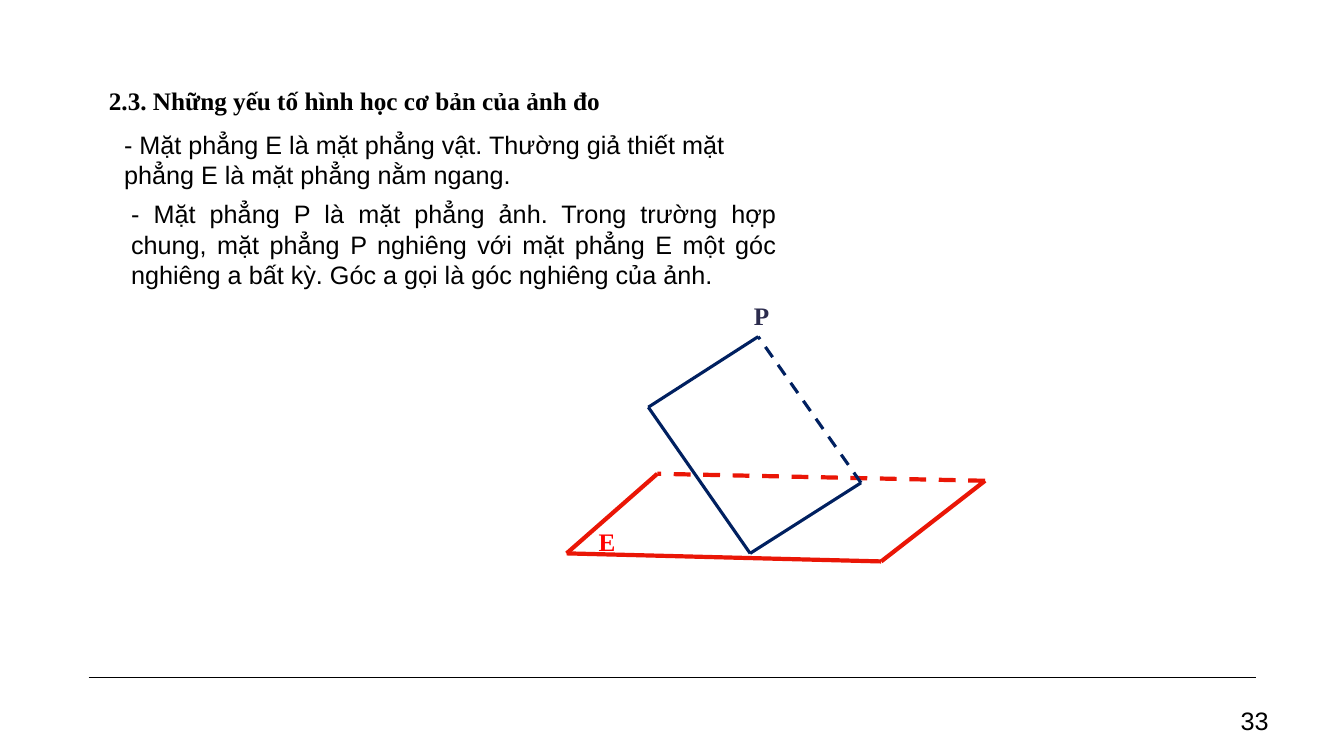
from pptx import Presentation
from pptx.dml.color import RGBColor
from pptx.enum.dml import MSO_LINE_DASH_STYLE as Dash
from pptx.enum.shapes import MSO_CONNECTOR as Connector
from pptx.enum.text import MSO_ANCHOR as Anchor, MSO_AUTO_SIZE as AutoSize, PP_ALIGN as Align
from pptx.oxml.ns import qn
from pptx.util import Pt
from lxml.etree import SubElement

EMU_PER_PX = 9144
SERIF = "Times New Roman"
SANS = "Arial"
BLACK = "000000"
RED = "EA1606"
NAVY = "002060"


def px(length):
    return length * EMU_PER_PX


def color(value):
    return RGBColor.from_string(value)


def place(shape, left, top, width, height):
    shape.left, shape.top = px(left), px(top)
    shape.width, shape.height = px(width), px(height)


def write(shape, text, font_name, text_color=BLACK, bold=False,
          align=Align.LEFT, anchor=Anchor.TOP, wrap=True):
    frame = shape.text_frame
    frame.text = text
    frame.word_wrap = wrap
    frame.auto_size = AutoSize.NONE
    frame.vertical_anchor = anchor
    paragraph = frame.paragraphs[0]
    paragraph.alignment = align
    paragraph.space_before = Pt(0)
    paragraph.font.name = font_name
    paragraph.font.size = Pt(18)
    paragraph.font.bold = bold
    paragraph.font.color.rgb = color(text_color)
    return paragraph


def write_body(shape, text, align=Align.LEFT):
    properties = write(shape, text, SANS, align=align)._p.get_or_add_pPr()
    properties.set("marL", "0")
    properties.set("indent", "0")
    SubElement(properties, qn("a:buNone"))
    properties.append(properties.find(qn("a:defRPr")))


def add_label(shapes, text, left, top, width, font_name, **style):
    label = shapes.add_textbox(px(left), px(top), px(width), px(40))
    write(label, text, font_name, **style)


def add_line(shapes, start, end, line_color, weight, dashed=False):
    line = shapes.add_connector(Connector.STRAIGHT, *map(px, start + end))
    line.line.color.rgb = color(line_color)
    line.line.width = Pt(weight)
    if dashed:
        line.line.dash_style = Dash.DASH
    SubElement(line._element.spPr, qn("a:effectLst"))


def add_plane(slide, corners, line_color, weight, name, name_left, name_top, name_color):
    shapes = slide.shapes.add_group_shape().shapes
    last = len(corners) - 1
    for index, start in enumerate(corners):
        end = corners[(index + 1) % len(corners)]
        add_line(shapes, start, end, line_color, weight, dashed=index == last)
    add_label(shapes, name, name_left, name_top, 37, SERIF,
              text_color=name_color, bold=True, wrap=False)


def main():
    presentation = Presentation()
    presentation.slide_width, presentation.slide_height = px(1333), px(750)
    slide = presentation.slides.add_slide(presentation.slide_layouts[3])
    title, object_plane, image_plane = slide.placeholders

    add_line(slide.shapes, (88, 672), (1246, 672), BLACK, 1)
    add_label(slide.shapes, "33", 1194, 695, 74, SANS,
              align=Align.RIGHT, anchor=Anchor.MIDDLE)

    place(title, 98, 80, 667, 40)
    write(title, "2.3. Những yếu tố hình học cơ bản của ảnh đo", SERIF, bold=True)
    place(object_plane, 113, 123, 667, 71)
    write_body(object_plane, "- Mặt phẳng E là mặt phẳng vật. Thường giả thiết mặt "
               "phẳng E là mặt phẳng nằm ngang.")
    place(image_plane, 120, 192, 660, 101)
    write_body(image_plane, "- Mặt phẳng P là mặt phẳng ảnh. Trong trường hợp chung, "
               "mặt phẳng P nghiêng với mặt phẳng E một góc nghiêng a bất kỳ. "
               "Góc a gọi là góc nghiêng của ảnh.", Align.JUSTIFY)

    add_plane(slide, [(652, 470), (562, 549), (874, 557), (977, 477)],
              RED, 3, "E", 584, 517, "FF0000")
    add_plane(slide, [(752, 334), (643, 404), (744, 549), (854, 479)],
              NAVY, 2.25, "P", 738, 293, "2C2C4E")

    presentation.save("out.pptx")


if __name__ == "__main__":
    main()
